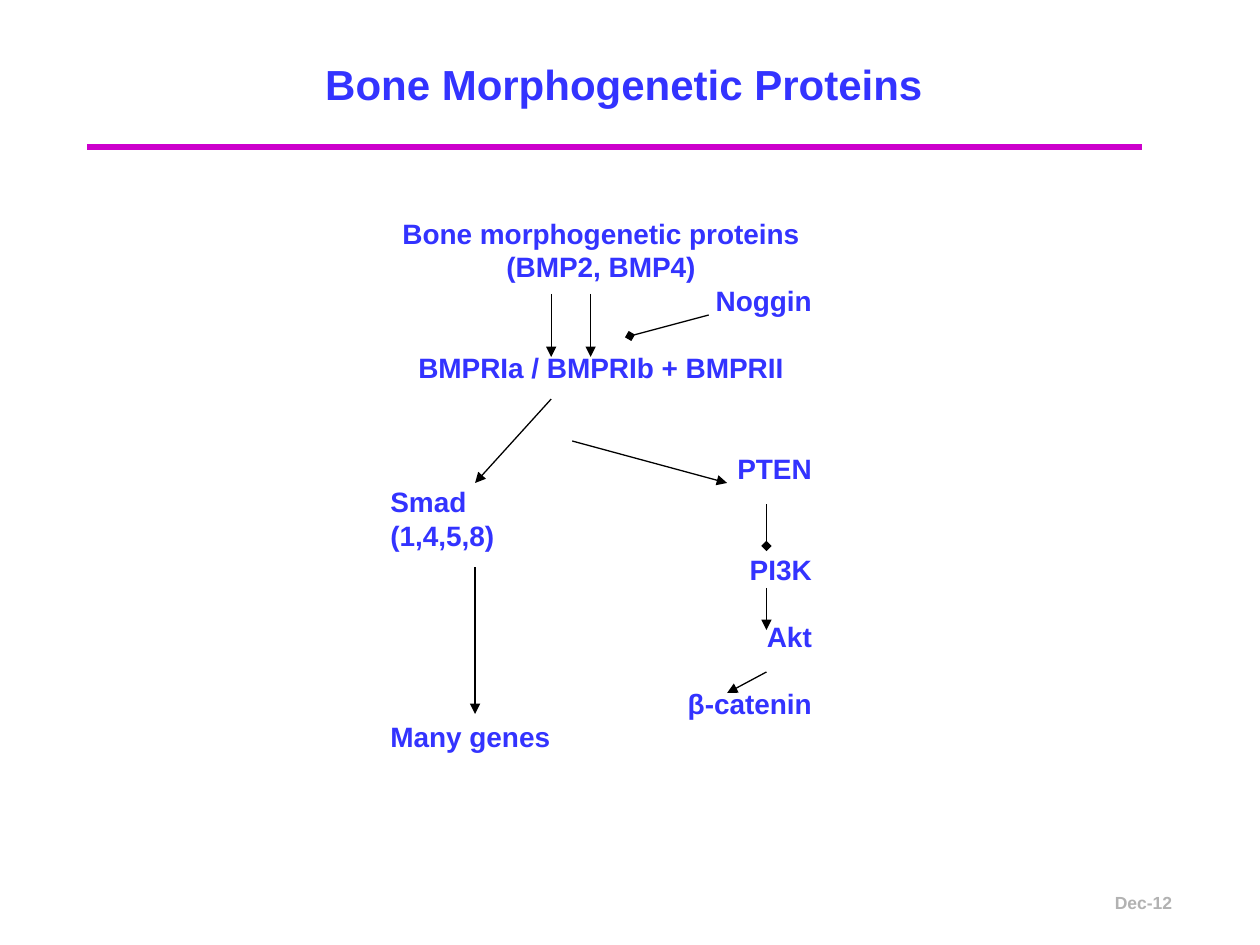
from lxml.etree import SubElement
from pptx import Presentation
from pptx.dml.color import RGBColor
from pptx.enum.shapes import MSO_CONNECTOR
from pptx.enum.text import MSO_ANCHOR, PP_ALIGN
from pptx.oxml.ns import qn
from pptx.util import Pt

LEFT, CENTER, RIGHT = PP_ALIGN.LEFT, PP_ALIGN.CENTER, PP_ALIGN.RIGHT
BLUE, MAGENTA, GRAY, BLACK = "3333FF", "CC00CC", "B2B2B2", "000000"
PITCH = 19.2  # line height of the pathway text

# alignment, wording, empty lines above
PATHWAY = [
    (CENTER, "Bone morphogenetic proteins", 0),
    (CENTER, "(BMP2, BMP4)", 0),
    (RIGHT, "Noggin", 0),
    (CENTER, "BMPRIa / BMPRIb + BMPRII", 1),
    (RIGHT, "PTEN", 2),
    (LEFT, "Smad", 0),
    (LEFT, "(1,4,5,8)", 0),
    (RIGHT, "PI3K", 0),
    (RIGHT, "Akt", 1),
    (RIGHT, "β-catenin", 1),
    (LEFT, "Many genes", 0),
]

# start x, start y, end x, end y
ACTIVATIONS = [
    (315, 168, 315, 204),
    (337.5, 168, 337.5, 204),
    (315, 228, 271.5, 276),
    (327, 252, 415.5, 276),
    (271.5, 324, 271.5, 408),
    (438, 336, 438, 360),
    (438, 384, 415.5, 396),
]
INHIBITIONS = [
    (405, 180, 360, 192),
    (438, 288, 438, 312),
]


def rgb(color):
    return RGBColor.from_string(color)


class SlideBuilder:
    """Holds the text style and the slide being filled."""

    font = {"name": "Arial", "bold": True}

    def __init__(self, slide):
        self.s = slide

    def add_text(self, p, text, size, color, **paragraph_format):
        for name, value in paragraph_format.items():
            setattr(p, name, value)
        r = p.add_run()
        r.text = text
        for name, value in {**self.font, "size": Pt(size)}.items():
            setattr(r.font, name, value)
        r.font.color.rgb = rgb(color)

    def title(self, text, box):
        sp = self.s.shapes.title
        for name, value in zip(("left", "top", "width", "height"), box):
            setattr(sp, name, Pt(value))
        tf = sp.text_frame
        tf.vertical_anchor = MSO_ANCHOR.MIDDLE
        self.add_text(tf.paragraphs[0], text, 24, BLUE, alignment=CENTER)

    def text_box(self, box, anchor=MSO_ANCHOR.TOP):
        tf = self.s.shapes.add_textbox(*map(Pt, box)).text_frame
        tf.word_wrap = True
        tf.vertical_anchor = anchor
        return tf

    def label(self, text, box, size, color):
        tf = self.text_box(box, MSO_ANCHOR.MIDDLE)
        self.add_text(tf.paragraphs[0], text, size, color)

    def pathway(self, lines, box):
        tf = self.text_box(box)
        for i, (alignment, text, gap) in enumerate(lines):
            p = tf.add_paragraph() if i else tf.paragraphs[0]
            self.add_text(p, text, 16, BLUE, alignment=alignment,
                          line_spacing=Pt(PITCH), space_before=Pt(gap * PITCH))

    def line(self, ends, color=BLACK, width=0.75, head=None):
        c = self.s.shapes.add_connector(MSO_CONNECTOR.STRAIGHT, *map(Pt, ends))
        c.line.color.rgb = rgb(color)
        c.line.width = Pt(width)
        properties = c._element.spPr
        if head:
            SubElement(properties.find(qn("a:ln")), qn("a:tailEnd"), type=head)
        SubElement(properties, qn("a:effectLst"))


def main():
    prs = Presentation()
    prs.slide_width, prs.slide_height = Pt(720), Pt(540)
    slide = SlideBuilder(prs.slides.add_slide(prs.slide_layouts[5]))

    slide.line((50, 84, 652.5, 84), MAGENTA, 3)
    slide.label("Dec-12", (630, 498, 84, 36), 10, GRAY)
    slide.pathway(PATHWAY, (216, 120, 255, 315))
    for ends in ACTIVATIONS:
        slide.line(ends, head="triangle")
    for ends in INHIBITIONS:
        slide.line(ends, head="diamond")
    slide.title("Bone Morphogenetic Proteins", (61, 12, 591, 72))

    prs.save("out.pptx")


if __name__ == "__main__":
    main()
